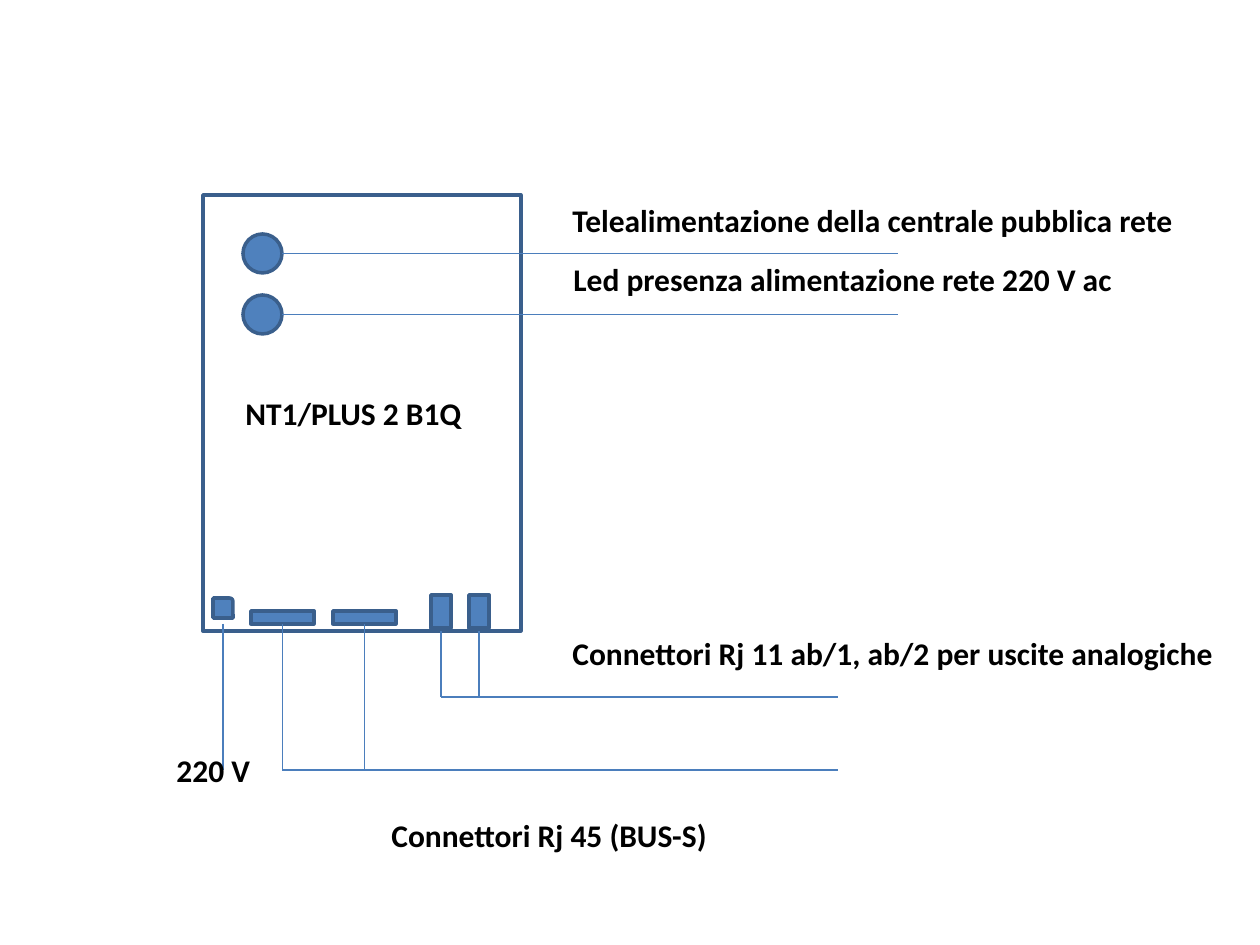
"""Build the NT1/PLUS connector diagram slide."""
from pptx import Presentation
from pptx import util as u
from pptx.dml.color import RGBColor
from pptx.enum import shapes, text
from pptx.oxml.ns import qn
from lxml import etree

PX = 914400 / 126
THEME = {
    "case": "FFFFFF", "part": "4F81BD", "edge": "3A5F8C", "lead": "4B7EBC",
    "ink": "000000", "font": "Calibri", "size": 18, "edge_pt": 2, "lead_pt": 0.75,
}
SHAPE = shapes.MSO_SHAPE

CASE = (203, 195, 318, 436)
LEDS = [(243, 234, 39, 39), (243, 295, 39, 39)]
RJ45 = [(251, 611, 63, 13), (333, 611, 63, 13)]
RJ11 = [(431, 595, 20, 33), (469, 595, 20, 33)]
POWER = (213, 598, 20, 20)
LED_LEAD_END, BUS_END = 898, 838
RJ45_BUS, RJ11_BUS = 770, 697
LABEL_HEIGHT = 50
LABELS = [
    ("NT1/PLUS 2 B1Q", 233, 388, 287),
    ("220 V", 164, 745, 118),
    ("Connettori Rj 45 (BUS-S)", 379, 810, 460),
    ("Telealimentazione della centrale pubblica rete", 560, 195, 626),
    ("Led presenza alimentazione rete 220 V ac", 561, 254, 625),
    ("Connettori Rj 11 ab/1, ab/2 per uscite analogiche", 560, 628, 685),
]


def emu(*lengths):
    return [u.Emu(round(length * PX)) for length in lengths]


def color(name):
    return RGBColor.from_string(THEME[name])


def add_part(slide, preset, box, fill="part"):
    part = slide.shapes.add_shape(preset, *emu(*box))
    part.shadow.inherit = False
    part.fill.solid()
    part.fill.fore_color.rgb = color(fill)
    part.line.color.rgb = color("edge")
    part.line.width = u.Pt(THEME["edge_pt"])
    return part


def add_lead(slide, x1, y1, x2, y2):
    lead = slide.shapes.add_connector(
        shapes.MSO_CONNECTOR.STRAIGHT, *emu(x1, y1, x2, y2))
    lead.line.color.rgb = color("lead")
    lead.line.width = u.Pt(THEME["lead_pt"])
    etree.SubElement(lead._element.spPr, qn("a:effectLst"))
    return lead


def add_label(slide, wording, left, top, width):
    frame = slide.shapes.add_textbox(*emu(left, top, width, LABEL_HEIGHT)).text_frame
    frame.word_wrap = True
    frame.auto_size = text.MSO_AUTO_SIZE.SHAPE_TO_FIT_TEXT
    frame.text = wording
    font = frame.paragraphs[0].runs[0].font
    font.name, font.size, font.bold = THEME["font"], u.Pt(THEME["size"]), True
    font.color.rgb = color("ink")


def center_x(box):
    return box[0] + box[2] / 2


def main():
    deck = Presentation()
    deck.slide_width, deck.slide_height = u.Inches(10), u.Inches(7.5)
    slide = deck.slides.add_slide(deck.slide_layouts[6])
    case_bottom = CASE[1] + CASE[3]

    add_part(slide, SHAPE.RECTANGLE, CASE, "case")
    for led in LEDS:
        left, top, width, height = led
        add_part(slide, SHAPE.OVAL, led)
        middle = top + height / 2
        add_lead(slide, left + width, middle, LED_LEAD_END, middle)

    for socket in RJ45:
        port = add_part(slide, SHAPE.RECTANGLE, socket)
        x = center_x(socket)
        lead = add_lead(slide, x, socket[1] + socket[3], x, RJ45_BUS)
        lead.begin_connect(port, 2)
    for socket in RJ11:
        add_part(slide, SHAPE.RECTANGLE, socket)
        x = center_x(socket)
        add_lead(slide, x, case_bottom, x, RJ11_BUS)
    for sockets, bus in ((RJ45, RJ45_BUS), (RJ11, RJ11_BUS)):
        add_lead(slide, center_x(sockets[0]), bus, BUS_END, bus)

    add_part(slide, SHAPE.ROUND_1_RECTANGLE, POWER)
    x = center_x(POWER)
    add_lead(slide, x, RJ45[0][1] + RJ45[0][3], x, RJ45_BUS)

    for label in LABELS:
        add_label(slide, *label)
    deck.save("out.pptx")


if __name__ == "__main__":
    main()
